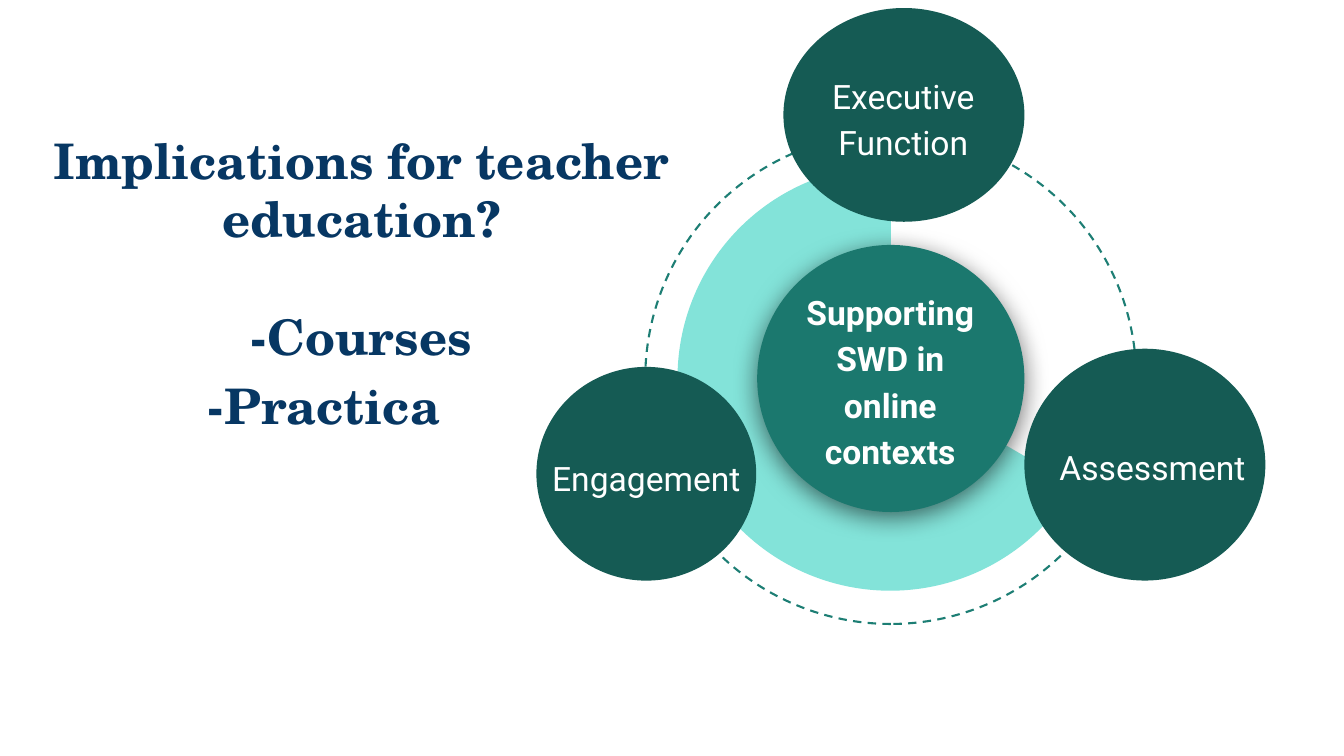
from lxml import etree
from pptx import Presentation
from pptx.dml.color import RGBColor
from pptx.enum.dml import MSO_LINE
from pptx.enum.shapes import MSO_SHAPE
from pptx.enum.text import MSO_ANCHOR, MSO_AUTO_SIZE, PP_ALIGN
from pptx.oxml import parse_xml
from pptx.oxml.ns import nsdecls
from pptx.util import Inches, Pt

NAVY = RGBColor(0x07, 0x37, 0x63)
RING_GREEN = RGBColor(0x1D, 0x7E, 0x74)
MINT = RGBColor(0x83, 0xE3, 0xD9)
TEAL = RGBColor(0x1B, 0x78, 0x6E)
DARK_TEAL = RGBColor(0x15, 0x5B, 0x54)
WHITE = RGBColor(0xFF, 0xFF, 0xFF)

deck = Presentation()
deck.slide_width = Inches(13.33)
deck.slide_height = Inches(7.5)
page = deck.slides.add_slide(deck.slide_layouts[5])


def add_round(kind, place, fill=None):
    """Add a flat, unlined shape at (left, top, width, height) in inches."""
    shape = page.shapes.add_shape(kind, *[Inches(length) for length in place])
    shape.shadow.inherit = False
    shape.line.fill.background()
    if fill is None:
        shape.fill.background()
    else:
        shape.fill.solid()
        shape.fill.fore_color.rgb = fill
    return shape


def add_label(text, place, bold=False):
    box = page.shapes.add_textbox(*[Inches(length) for length in place])
    frame = box.text_frame
    frame.word_wrap = True
    frame.vertical_anchor = MSO_ANCHOR.MIDDLE
    frame.margin_left = frame.margin_right = Inches(0.13)
    frame.margin_top = frame.margin_bottom = Inches(0.13)
    para = frame.paragraphs[0]
    para.alignment = PP_ALIGN.CENTER
    para.line_spacing = 1.15
    span = para.add_run()
    span.text = text
    span.font.name = "Roboto"
    span.font.size = Pt(24)
    span.font.bold = bold
    span.font.color.rgb = WHITE


# Title with its two points
title = page.shapes.title
title.left, title.top = Inches(0.29), Inches(1.19)
title.width, title.height = Inches(6.59), Inches(3.27)
frame = title.text_frame
frame.word_wrap = True
frame.auto_size = MSO_AUTO_SIZE.NONE
frame.vertical_anchor = MSO_ANCHOR.TOP
frame.margin_left = frame.margin_right = Inches(0.1)
frame.margin_top = frame.margin_bottom = Inches(0.1)
frame.text = "Implications for teacher education?\n-Courses\n-Practica"
for para, gap in zip(frame.paragraphs, (0, 42, 7)):
    para.alignment = PP_ALIGN.CENTER
    para.space_before = Pt(gap)
    para.font.name = "TeX Gyre Schola"
    para.font.size = Pt(35)
    para.font.bold = True
    para.font.color.rgb = NAVY
practica = frame.paragraphs[2]
practica.alignment = PP_ALIGN.LEFT
practica_format = practica._p.get_or_add_pPr()
practica_format.set("marL", str(Inches(1.67)))
practica_format.set("indent", "0")

# Dashed ring and the two-thirds pie inside it
ring = add_round(MSO_SHAPE.OVAL, (6.4, 1.32, 4.87, 4.87))
ring.rotation = 270
ring.line.color.rgb = RING_GREEN
ring.line.width = Pt(1.5)
ring.line.dash_style = MSO_LINE.DASH

pie = add_round(MSO_SHAPE.PIE, (6.72, 1.64, 4.22, 4.22), MINT)
pie.adjustments[0] = 18.12
pie.adjustments[1] = 162.15

# Raised hub
hub = add_round(MSO_SHAPE.OVAL, (7.51, 2.43, 2.65, 2.65), TEAL)
effects = hub._element.spPr.find("{*}effectLst")
effects.append(parse_xml(
    f'<a:outerShdw {nsdecls("a")} blurRad="{Pt(18)}" dist="{Pt(4)}" '
    'dir="5400000" algn="ctr" rotWithShape="0">'
    '<a:srgbClr val="000000"><a:alpha val="55000"/></a:srgbClr></a:outerShdw>'))
add_label("Supporting SWD in online contexts", (7.85, 3.15, 1.96, 1.21), bold=True)

# Satellites around the hub: text, circle place, label place
satellites = [
    ("Executive Function", (7.77, 0.08, 2.39, 2.12), (8.11, 0.42, 1.7, 1.46)),
    ("Engagement", (5.32, 3.64, 2.18, 2.12), (5.32, 3.98, 2.18, 1.46)),
    ("Assessment", (10.16, 3.46, 2.39, 2.3), (10.34, 3.82, 2.18, 1.57)),
]
for text, circle_place, label_place in satellites:
    add_round(MSO_SHAPE.OVAL, circle_place, DARK_TEAL)
    add_label(text, label_place)

deck.save("out.pptx")
